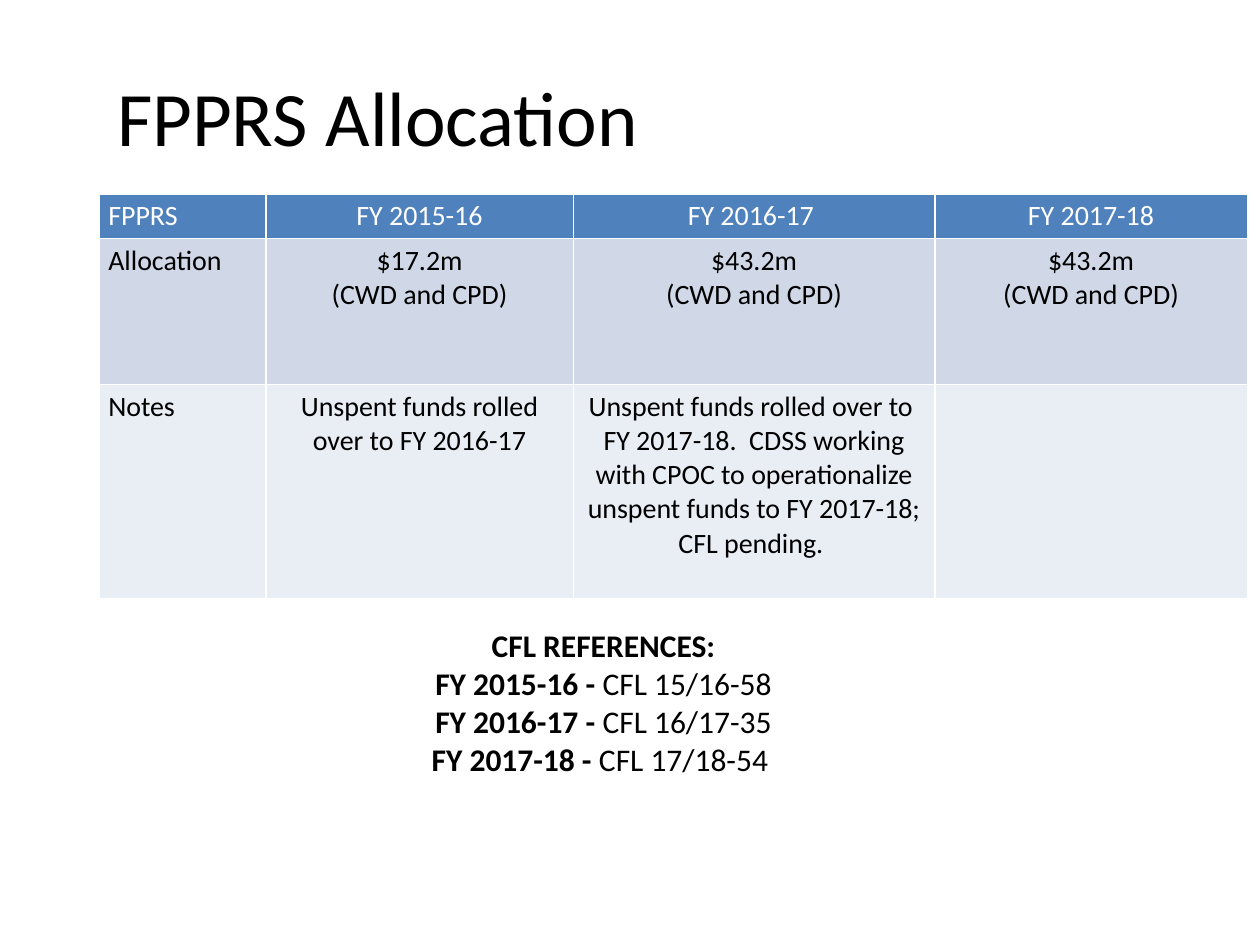
from pptx import Presentation
from pptx.dml.color import RGBColor
from pptx.enum.text import MSO_ANCHOR, PP_ALIGN
from pptx.util import Inches, Pt

BLACK = RGBColor(0x00, 0x00, 0x00)
WHITE = RGBColor(0xFF, 0xFF, 0xFF)
HEADER_BLUE = RGBColor(0x4F, 0x81, 0xBD)
BAND_DARK = RGBColor(0xD0, 0xD8, 0xE8)
BAND_LIGHT = RGBColor(0xE9, 0xED, 0xF4)

GRID = Inches(0.1)  # 100 columns by 75 rows
SHARED = "(CWD and CPD)"
ROWS = [
    ["FPPRS", "FY 2015-16", "FY 2016-17 ", "FY 2017-18"],
    ["Allocation", f"$17.2m\n{SHARED}", f"$43.2m\n{SHARED}", f"$43.2m\n{SHARED}"],
    ["Notes", "Unspent funds rolled over to FY 2016-17",
     "Unspent funds rolled over to \nFY 2017-18.  CDSS working with CPOC to "
     "operationalize unspent funds to FY 2017-18; CFL pending. ", ""],
]
REFERENCES = [
    ("CFL REFERENCES:", ""),
    ("FY 2015-16 - ", "CFL 15/16-58"),
    ("FY 2016-17 - ", "CFL 16/17-35"),
    ("FY 2017-18 - ", "CFL 17/18-54 "),
]


def grid(*units):
    return [round(unit * GRID) for unit in units]


class SlideBuilder:
    font_name = "Calibri"

    def __init__(self, slide):
        self.slide = slide

    def style(self, font, size, color=BLACK, bold=False):
        font.name, font.size, font.bold = self.font_name, Pt(size), bold
        font.color.rgb = color

    def title(self, text, box):
        title = self.slide.shapes.title
        title.left, title.top, title.width, title.height = grid(*box)
        frame = title.text_frame
        frame.text = text
        frame.vertical_anchor = MSO_ANCHOR.MIDDLE
        frame.paragraphs[0].alignment = PP_ALIGN.LEFT
        self.style(frame.paragraphs[0].runs[0].font, 44)

    def table(self, rows, corner, widths, heights, fills):
        box = grid(*corner, sum(widths), sum(heights))
        table = self.slide.shapes.add_table(len(rows), len(widths), *box).table
        for column, width in zip(table.columns, grid(*widths)):
            column.width = width
        for row, height in zip(table.rows, grid(*heights)):
            row.height = height
        for r, texts in enumerate(rows):
            for c, text in enumerate(texts):
                self.cell(table.cell(r, c), text, fills[r],
                          WHITE if r == 0 else BLACK,
                          PP_ALIGN.CENTER if c else PP_ALIGN.LEFT)

    def cell(self, cell, text, fill, color, alignment):
        cell.fill.solid()
        cell.fill.fore_color.rgb = fill
        cell.margin_left = cell.margin_right = Inches(0.07)
        cell.margin_top = cell.margin_bottom = Inches(0.04)
        cell.text_frame.text = text
        for paragraph in cell.text_frame.paragraphs:
            paragraph.alignment = alignment
            self.style(paragraph.font, 16, color)
            for run in paragraph.runs:
                self.style(run.font, 16, color)

    def references(self, lines, box):
        """Centred lines, each with a bold label and a plain reference."""
        frame = self.slide.shapes.add_textbox(*grid(*box)).text_frame
        frame.word_wrap = True
        frame.text = "\n".join(label for label, _ in lines)
        for paragraph, (_, reference) in zip(frame.paragraphs, lines):
            paragraph.alignment = PP_ALIGN.CENTER
            self.style(paragraph.runs[0].font, 18, bold=True)
            if reference:
                run = paragraph.add_run()
                run.text = reference
                self.style(run.font, 18)


def main():
    deck = Presentation()
    deck.slide_width, deck.slide_height = grid(100, 75)
    title_only = deck.slide_layouts[5]
    builder = SlideBuilder(deck.slides.add_slide(title_only))
    builder.title("FPPRS Allocation", (8.3, 2.9, 88.3, 12.5))
    builder.table(ROWS, corner=(7.9, 15.4), widths=(13.2, 24.4, 28.7, 24.8),
                  heights=(3.4, 11.6, 17), fills=(HEADER_BLUE, BAND_DARK, BAND_LIGHT))
    builder.references(REFERENCES, (15.8, 49.2, 64.2, 13.1))
    deck.save("out.pptx")


if __name__ == "__main__":
    main()
